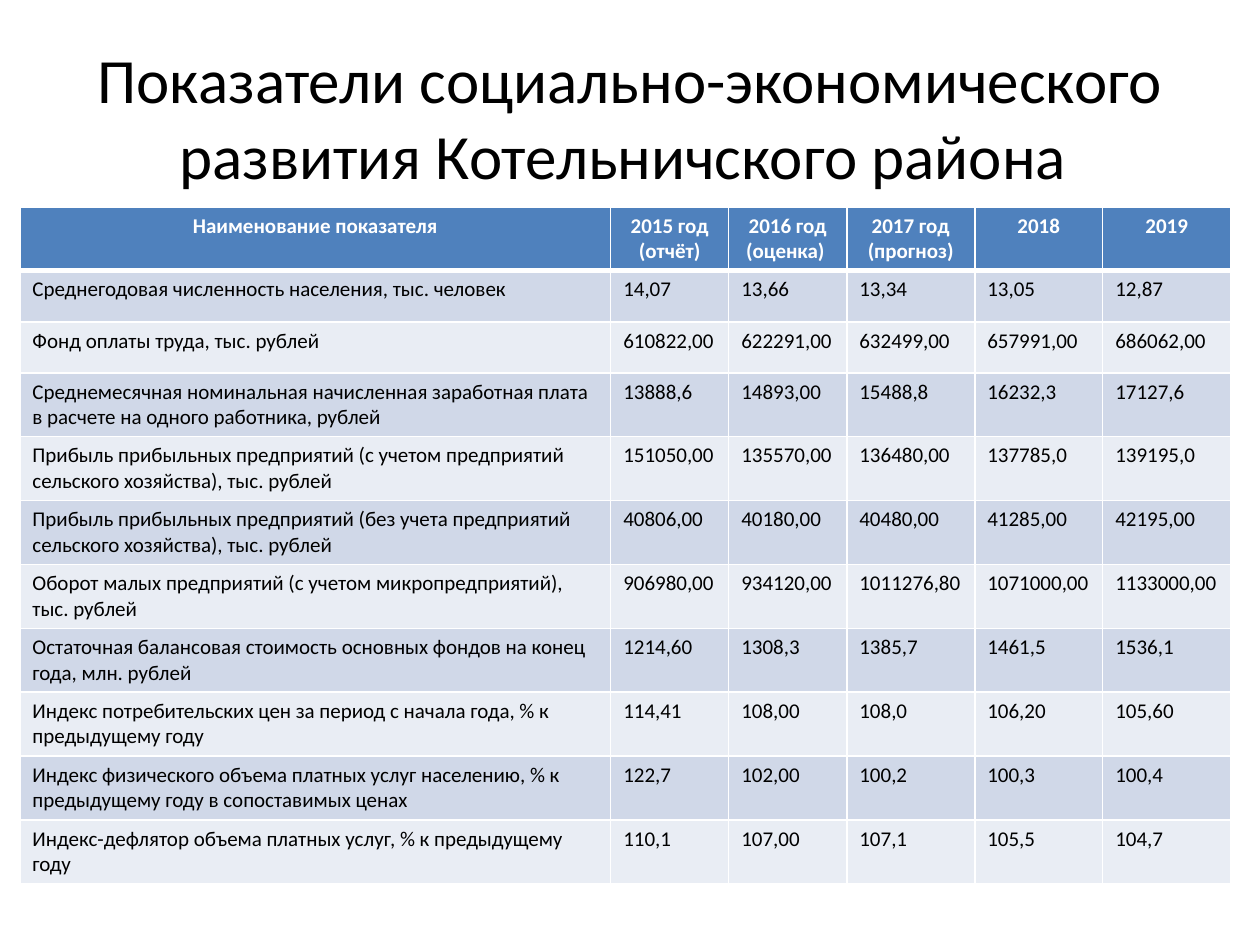
import pptx
import pptx.util
import pptx.dml.color
import pptx.enum.text
import pptx.oxml
import pptx.oxml.ns

Cm = pptx.util.Cm
Pt = pptx.util.Pt
RGBColor = pptx.dml.color.RGBColor
PP_ALIGN = pptx.enum.text.PP_ALIGN

BLACK = RGBColor(0x00, 0x00, 0x00)
WHITE = RGBColor(0xFF, 0xFF, 0xFF)
HEADER_BLUE = RGBColor(0x4F, 0x81, 0xBD)
BAND_DARK = RGBColor(0xD0, 0xD8, 0xE8)
BAND_LIGHT = RGBColor(0xE9, 0xED, 0xF4)
FONT = "Calibri"

header = ["Наименование показателя", "2015 год (отчёт)", "2016 год (оценка) ",
          "2017 год (прогноз)", "2018", "2019"]
indicators = [
    ["Среднегодовая численность населения, тыс. человек",
     "14,07", "13,66", "13,34", "13,05", "12,87"],
    ["Фонд оплаты труда, тыс. рублей",
     "610822,00", "622291,00", "632499,00", "657991,00", "686062,00"],
    ["Среднемесячная номинальная начисленная заработная плата в расчете на одного работника, рублей",
     "13888,6", "14893,00", "15488,8", "16232,3", "17127,6"],
    ["Прибыль прибыльных предприятий (с учетом предприятий сельского хозяйства), тыс. рублей",
     "151050,00", "135570,00", "136480,00", "137785,0", "139195,0"],
    ["Прибыль прибыльных предприятий (без учета предприятий сельского хозяйства), тыс. рублей",
     "40806,00", "40180,00", "40480,00", "41285,00", "42195,00"],
    ["Оборот малых предприятий (с учетом микропредприятий), тыс. рублей",
     "906980,00", "934120,00", "1011276,80", "1071000,00", "1133000,00"],
    ["Остаточная балансовая стоимость основных фондов на конец года, млн. рублей",
     "1214,60", "1308,3", "1385,7", "1461,5", "1536,1"],
    ["Индекс потребительских цен за период с начала года, % к предыдущему году",
     "114,41", "108,00", "108,0", "106,20", "105,60"],
    ["Индекс физического объема платных услуг населению, % к предыдущему году в сопоставимых ценах",
     "122,7", "102,00", "100,2", "100,3", "100,4"],
    ["Индекс-дефлятор объема платных услуг, % к предыдущему году",
     "110,1", "107,00", "107,1", "105,5", "104,7"],
]
rows = [header] + indicators
column_widths = [11.91, 2.38, 2.38, 2.58, 2.58, 2.58]
row_height = 1.03


def add_run(paragraph, text, size, color, bold=False):
    run = paragraph.add_run()
    run.text = text
    run.font.name = FONT
    run.font.size = Pt(size)
    run.font.bold = bold
    run.font.color.rgb = color


def add_border(cell, side, width):
    line = pptx.oxml.parse_xml(
        f'<a:{side} {pptx.oxml.ns.nsdecls("a")} w="{Pt(width)}">'
        f'<a:solidFill><a:srgbClr val="{WHITE}"/></a:solidFill></a:{side}>')
    cell._tc.get_or_add_tcPr().append(line)


presentation = pptx.Presentation()
presentation.slide_width = Cm(25.4)
presentation.slide_height = Cm(19.05)
slide = presentation.slides.add_slide(presentation.slide_layouts[5])

title = slide.shapes.title
title.left, title.top, title.width, title.height = Cm(1.27), Cm(0.76), Cm(22.86), Cm(3.18)
title.text_frame.auto_size = pptx.enum.text.MSO_AUTO_SIZE.NONE
title.text_frame.vertical_anchor = pptx.enum.text.MSO_ANCHOR.MIDDLE
heading = title.text_frame.paragraphs[0]
heading.alignment = PP_ALIGN.CENTER
add_run(heading, "Показатели социально-экономического развития Котельничского района ", 36, BLACK)

table = slide.shapes.add_table(
    len(rows), len(header), Cm(0.4), Cm(4.17),
    Cm(sum(column_widths)), Cm(row_height * len(rows))).table
for column, width in zip(table.columns, column_widths):
    column.width = Cm(width)

for row_index, row in enumerate(rows):
    table.rows[row_index].height = Cm(row_height)
    is_header = row_index == 0
    if is_header:
        fill_color = HEADER_BLUE
    else:
        fill_color = BAND_DARK if row_index % 2 else BAND_LIGHT
    top_width = 3 if row_index == 1 else 1
    bottom_width = 3 if is_header else 1
    for column_index, text in enumerate(row):
        cell = table.cell(row_index, column_index)
        for side, width in (("lnL", 1), ("lnR", 1), ("lnT", top_width), ("lnB", bottom_width)):
            add_border(cell, side, width)
        cell.fill.solid()
        cell.fill.fore_color.rgb = fill_color
        paragraph = cell.text_frame.paragraphs[0]
        paragraph.alignment = PP_ALIGN.CENTER if is_header else PP_ALIGN.LEFT
        add_run(paragraph, text, 12, WHITE if is_header else BLACK, is_header)

presentation.save("out.pptx")
